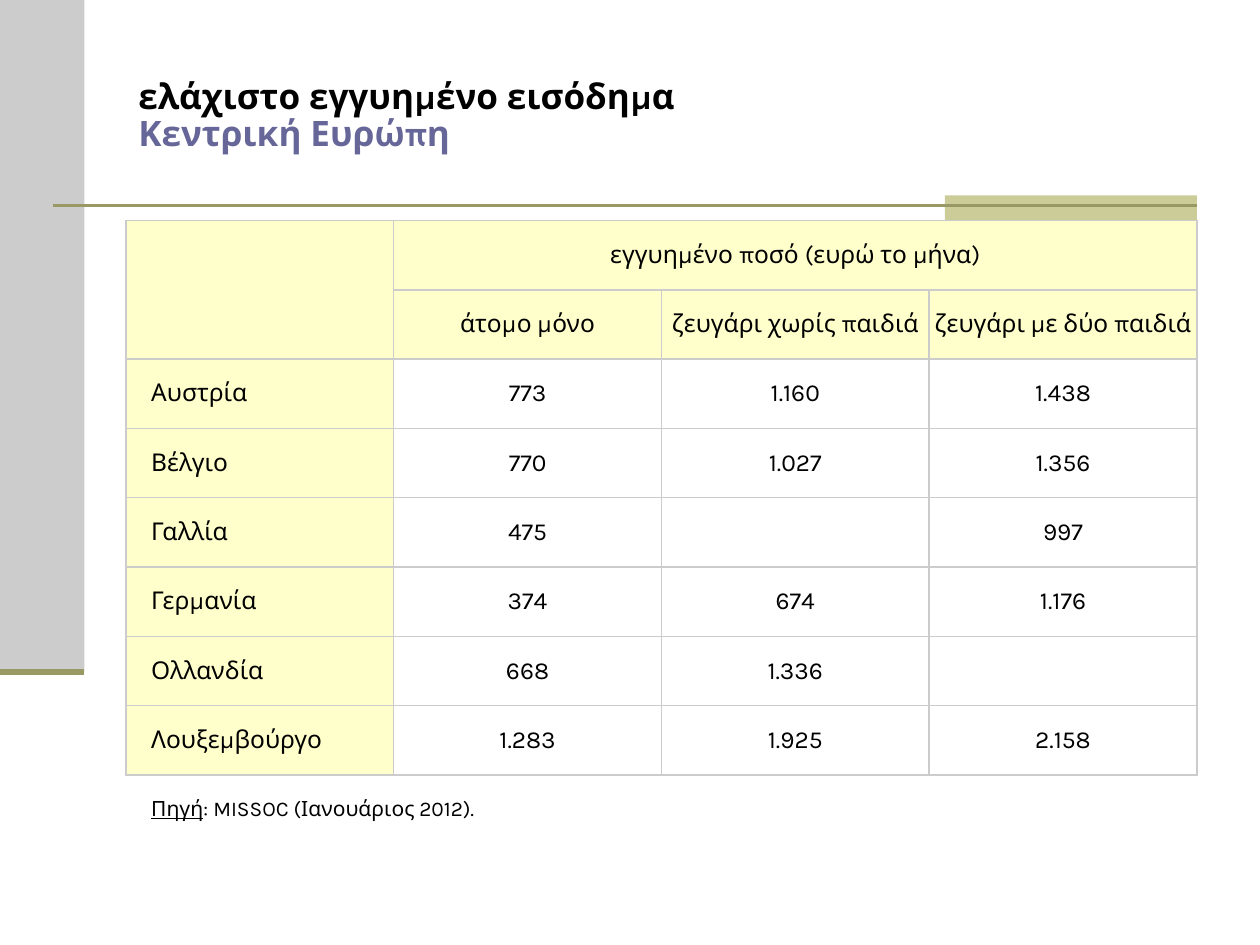
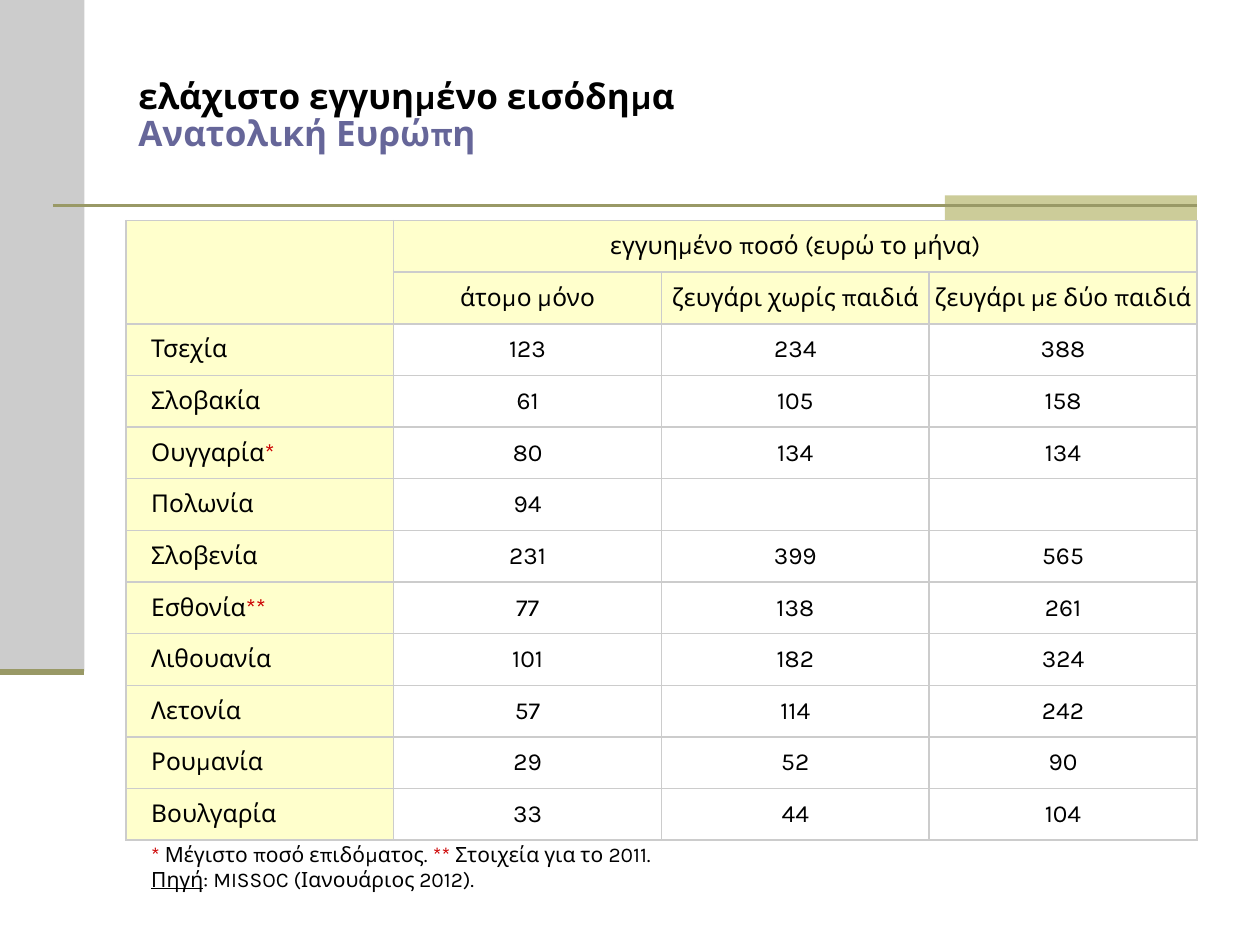
from lxml import etree
from pptx import Presentation, util as u
from pptx.dml.color import RGBColor
from pptx.enum import shapes, text
from pptx.oxml import parse_xml
from pptx.oxml.ns import nsdecls, qn

PX = 9144
FONT = "Karla"
NO_GRID_STYLE = "{2D5ABB26-0587-4C30-8999-92F81FD0307C}"

BLACK = RGBColor(0x00, 0x00, 0x00)
GREY = RGBColor(0xCC, 0xCC, 0xCC)
OLIVE = RGBColor(0x99, 0x99, 0x66)
SAND = RGBColor(0xCC, 0xCC, 0x99)
CREAM = RGBColor(0xFF, 0xFF, 0xCC)
PURPLE = RGBColor(0x66, 0x66, 0x99)
RED = RGBColor(0xCC, 0x00, 0x00)

AMOUNT = "εγγυημένο ποσό (ευρώ το μήνα)"
HOUSEHOLDS = ["άτομο μόνο", "ζευγάρι χωρίς παιδιά", "ζευγάρι με δύο παιδιά"]
SOURCE = [("Πηγή", BLACK, True), (": MISSOC (Ιανουάριος 2012).", BLACK, False)]
FOOTNOTES = [
    ("*", RED, False),
    (" Μέγιστο ποσό επιδόματος. ", BLACK, False),
    ("** ", RED, False),
    ("Στοιχεία για το 2011.", BLACK, False),
]

CENTRAL = [
    ("Αυστρία", "773", "1.160", "1.438"),
    ("Βέλγιο", "770", "1.027", "1.356"),
    ("Γαλλία", "475", "", "997"),
    ("Γερμανία", "374", "674", "1.176"),
    ("Ολλανδία", "668", "1.336", ""),
    ("Λουξεμβούργο", "1.283", "1.925", "2.158"),
]
EASTERN = [
    ("Τσεχία", "123", "234", "388"),
    ("Σλοβακία", "61", "105", "158"),
    ("Ουγγαρία*", "80", "134", "134"),
    ("Πολωνία", "94", "", ""),
    ("Σλοβενία", "231", "399", "565"),
    ("Εσθονία**", "77", "138", "261"),
    ("Λιθουανία", "101", "182", "324"),
    ("Λετονία", "57", "114", "242"),
    ("Ρουμανία", "29", "52", "90"),
    ("Βουλγαρία", "33", "44", "104"),
]


def px(*lengths):
    return [u.Emu(n * PX) for n in lengths]


def add_rect(s, box, colour):
    sp = s.shapes.add_shape(shapes.MSO_SHAPE.RECTANGLE, *px(*box))
    sp.shadow.inherit = False
    sp.fill.solid()
    sp.fill.fore_color.rgb = colour
    sp.line.fill.background()


def add_rule(s, x1, x2, y, weight):
    sp = s.shapes.add_connector(shapes.MSO_CONNECTOR.STRAIGHT, *px(x1, y, x2, y))
    sp.line.color.rgb = OLIVE
    sp.line.width = u.Pt(weight)
    etree.SubElement(sp.element.spPr, qn("a:effectLst"))


def set_font(p, size, bold=False):
    p.font.name = FONT
    p.font.size = u.Pt(size)
    p.font.bold = bold


def add_run(p, words, colour, underline=False):
    r = p.add_run()
    r.text = words
    r.font.color.rgb = colour
    if underline:
        r.font.underline = True


def add_title(s, region):
    tf = s.shapes.add_textbox(*px(100, 30, 850, 125)).text_frame
    tf.word_wrap = True
    tf.vertical_anchor = text.MSO_ANCHOR.MIDDLE
    p = tf.paragraphs[0]
    p.line_spacing = 0.9
    set_font(p, 20, True)
    add_run(p, "ελάχιστο εγγυημένο εισόδημα", BLACK)
    p.add_line_break()
    add_run(p, region, PURPLE)


def set_borders(cell, drawn):
    tc_pr = cell._tc.get_or_add_tcPr()
    for side in "LRTB":
        paint = f'<a:solidFill><a:srgbClr val="{GREY}"/></a:solidFill>' if side in drawn else "<a:noFill/>"
        tc_pr.append(parse_xml(f'<a:ln{side} {nsdecls("a")} w="12700">{paint}</a:ln{side}>'))


def style_cell(cell, fill=None, indent=0, borders="LRTB"):
    set_borders(cell, borders)
    if fill is None:
        cell.fill.background()
    else:
        cell.fill.solid()
        cell.fill.fore_color.rgb = fill
    cell.margin_left = u.Emu(indent * PX)
    cell.margin_right = cell.margin_top = cell.margin_bottom = 0
    cell.vertical_anchor = text.MSO_ANCHOR.MIDDLE


def write_value(cell, words):
    p = cell.text_frame.paragraphs[0]
    p.alignment = text.PP_ALIGN.CENTER
    set_font(p, 14)
    if words:
        add_run(p, words, BLACK)


def write_country(cell, label):
    p = cell.text_frame.paragraphs[0]
    set_font(p, 14)
    country = label.rstrip("*")
    add_run(p, country, BLACK)
    if label != country:
        add_run(p, label[len(country):], RED)


def write_notes(cell, notes):
    tf = cell.text_frame
    for i, note in enumerate(notes):
        p = tf.add_paragraph() if i else tf.paragraphs[0]
        set_font(p, 12)
        for run in note:
            add_run(p, *run)


def add_income_table(s, countries, notes, row_height, note_height):
    heads = [("", AMOUNT, "", ""), ("", *HOUSEHOLDS)]
    rows = heads + countries
    last = len(rows)
    height = row_height * last + note_height
    sp = s.shapes.add_table(last + 1, 4, *px(100, 175, 850, height))
    sp.element.xpath(".//a:tableStyleId")[0].text = NO_GRID_STYLE
    tbl = sp.table
    tbl.first_row = tbl.horz_banding = False
    for row in tbl.rows:
        row.height = u.Emu(row_height * PX)
    tbl.rows[last].height = u.Emu(note_height * PX)

    for i, values in enumerate(rows):
        for j, words in enumerate(values):
            cell = tbl.cell(i, j)
            is_country = j == 0 and i >= len(heads)
            is_label = j == 0 or i < len(heads)
            style_cell(cell, CREAM if is_label else None, 20 if is_country else 0)
            if is_country:
                write_country(cell, words)
            else:
                write_value(cell, words)
    for j in range(4):
        style_cell(tbl.cell(last, j), indent=20, borders="T")
    write_notes(tbl.cell(last, 0), notes)

    tbl.cell(0, 0).merge(tbl.cell(1, 0))
    tbl.cell(0, 1).merge(tbl.cell(0, 3))
    tbl.cell(last, 0).merge(tbl.cell(last, 3))


def add_income_slide(prs, region, *table):
    s = prs.slides.add_slide(prs.slide_layouts[6])
    add_rect(s, (0, 0, 67, 533), GREY)
    add_rect(s, (750, 155, 200, 20), SAND)
    add_rule(s, 42, 950, 163, 1.5)
    add_rule(s, 0, 67, 533, 3.5)
    add_title(s, region)
    add_income_table(s, *table)


def main():
    prs = Presentation()
    prs.slide_width, prs.slide_height = px(1000, 750)
    add_income_slide(prs, "Κεντρική Ευρώπη", CENTRAL, [SOURCE], 55, 55)
    add_income_slide(prs, "Ανατολική Ευρώπη", EASTERN, [FOOTNOTES, SOURCE], 41, 44)
    prs.save("out.pptx")


if __name__ == "__main__":
    main()
